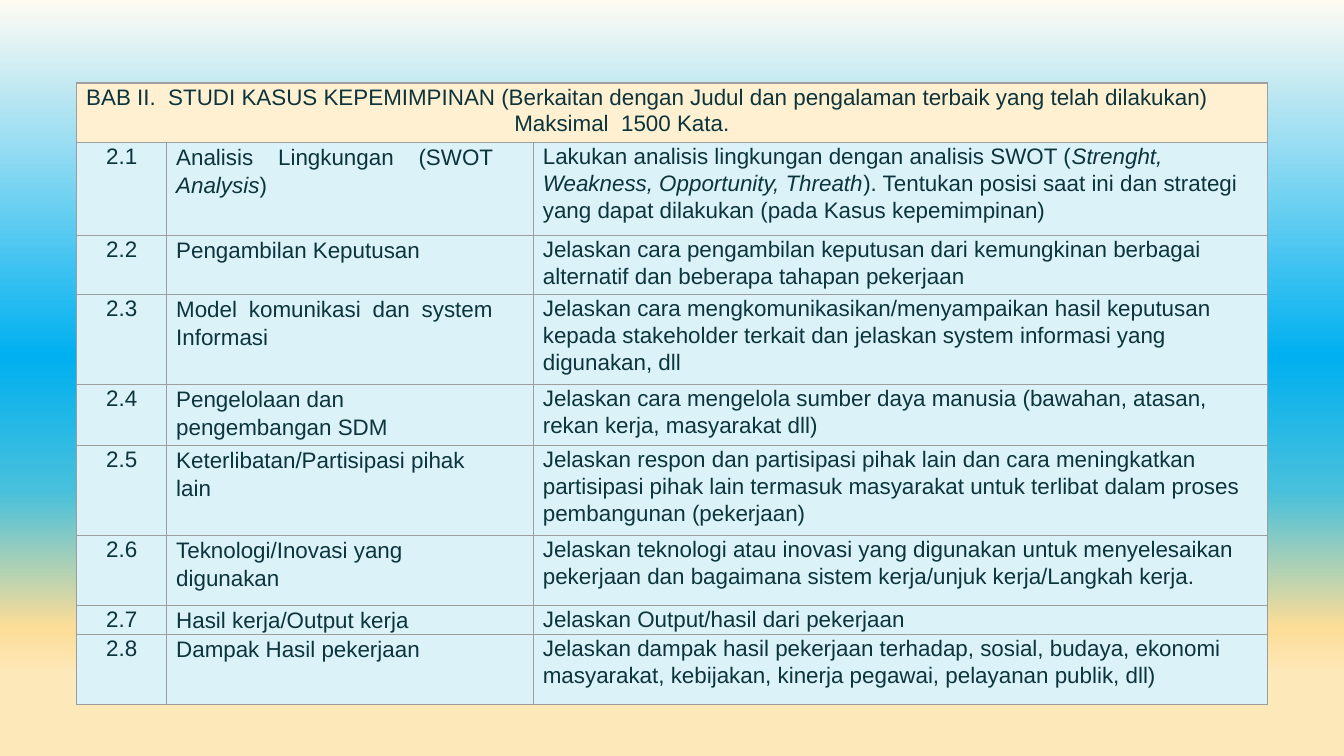
from dataclasses import dataclass

from lxml import etree
from pptx import Presentation
from pptx.dml.color import RGBColor
from pptx.enum.text import PP_ALIGN
from pptx.oxml.ns import qn
from pptx.slide import Slide
from pptx.table import _Cell
from pptx.util import Cm, Pt

LEFT, CENTER, JUSTIFY = PP_ALIGN.LEFT, PP_ALIGN.CENTER, PP_ALIGN.JUSTIFY

INK = RGBColor(0x0C, 0x34, 0x3D)
BORDER = RGBColor(0x9E, 0x9E, 0x9E)
HEADER_FILL = RGBColor(0xFE, 0xF0, 0xD1)
BODY_FILL = RGBColor(0xDA, 0xF2, 0xF8)
SKY_TO_SAND = [
    (0, RGBColor(0xFF, 0xFB, 0xF3)),
    (47, RGBColor(0x00, 0xB0, 0xF0)),
    (65, RGBColor(0x48, 0xC0, 0xDB)),
    (83, RGBColor(0xFC, 0xDD, 0x97)),
    (89, RGBColor(0xFD, 0xE8, 0xB9)),
]

FONT = "Arial"
FONT_SIZE = Pt(12)
BORDER_WIDTH = Pt(0.75)
COLUMN_WIDTHS = [1.7, 6.93, 13.87]
HEADER_HEIGHT = 1.13
HEADER_INDENT = Cm(8.09)
SIDE_MARGIN = Cm(0.18)
TOPIC_RIGHT_MARGIN = Cm(0.76)

HEADER = (
    "BAB II.  STUDI KASUS KEPEMIMPINAN (Berkaitan dengan Judul dan "
    "pengalaman terbaik yang telah dilakukan)\vMaksimal  1500 Kata."
)


@dataclass(frozen=True)
class Section:
    """One table row; asterisks enclose italic words."""
    topic: str
    guide: str
    height: float
    topic_align: PP_ALIGN = JUSTIFY


@dataclass(frozen=True)
class ParagraphStyle:
    align: PP_ALIGN = LEFT
    line_spacing: float = 1.07
    space_after: float = 1.4


SECTIONS = [
    Section("Analisis Lingkungan (SWOT *Analysis*)",
            "Lakukan analisis lingkungan dengan analisis SWOT (*Strenght, "
            "Weakness, Opportunity, Threath*). Tentukan posisi saat ini dan "
            "strategi yang dapat dilakukan (pada Kasus kepemimpinan)", 1.75),
    Section("Pengambilan Keputusan",
            "Jelaskan cara pengambilan keputusan dari kemungkinan berbagai "
            "alternatif dan beberapa tahapan pekerjaan", 1.12),
    Section("Model komunikasi dan system Informasi",
            "Jelaskan cara mengkomunikasikan/menyampaikan hasil keputusan "
            "kepada stakeholder terkait dan jelaskan system informasi yang "
            "digunakan, dll", 1.7),
    Section("Pengelolaan dan pengembangan SDM",
            "Jelaskan cara mengelola sumber daya manusia (bawahan, atasan, "
            "rekan kerja, masyarakat dll)", 1.15, LEFT),
    Section("Keterlibatan/Partisipasi pihak lain",
            "Jelaskan respon dan partisipasi pihak lain dan cara meningkatkan "
            "partisipasi pihak lain termasuk masyarakat untuk terlibat dalam "
            "proses pembangunan (pekerjaan)", 1.7, LEFT),
    Section("Teknologi/Inovasi yang digunakan",
            "Jelaskan teknologi atau inovasi yang digunakan untuk "
            "menyelesaikan pekerjaan dan bagaimana sistem kerja/unjuk "
            "kerja/Langkah kerja.", 1.32, LEFT),
    Section("Hasil kerja/Output kerja",
            "Jelaskan Output/hasil dari pekerjaan", 0.56),
    Section("Dampak Hasil pekerjaan",
            "Jelaskan dampak hasil pekerjaan terhadap, sosial, budaya, ekonomi "
            "masyarakat, kebijakan, kinerja pegawai, pelayanan publik, dll)", 1.32),
]


def add_color(parent: etree._Element, color: RGBColor) -> None:
    etree.SubElement(parent, qn("a:srgbClr"), val=str(color))


def paint_background(slide: Slide) -> None:
    fill = slide.background.fill
    fill.gradient()
    fill.gradient_angle = 270
    stops = slide.element.find(".//" + qn("a:gsLst"))
    for stop in list(stops):
        stops.remove(stop)
    for percent, color in SKY_TO_SAND:
        add_color(etree.SubElement(stops, qn("a:gs"), pos=str(percent * 1000)), color)


def style_cell(cell: _Cell, color: RGBColor) -> None:
    """Set margins, borders and fill."""
    cell.margin_left = cell.margin_right = SIDE_MARGIN
    cell.margin_top = cell.margin_bottom = 0
    tc_pr = cell._tc.get_or_add_tcPr()
    for side in ("a:lnL", "a:lnR", "a:lnT", "a:lnB"):
        line = etree.SubElement(tc_pr, qn(side), w=str(BORDER_WIDTH))
        add_color(etree.SubElement(line, qn("a:solidFill")), BORDER)
    cell.fill.solid()
    cell.fill.fore_color.rgb = color


def write_cell(cell: _Cell, text: str, style: ParagraphStyle) -> None:
    p = cell.text_frame.paragraphs[0]
    p.alignment = style.align
    p.line_spacing = style.line_spacing
    p.space_after = Pt(style.space_after)
    pieces = text.split("*")
    p.text = pieces[0]
    for piece in pieces[1:]:
        p.add_run().text = piece
    for i, r in enumerate(p.runs):
        r.font.name = FONT
        r.font.size = FONT_SIZE
        r.font.color.rgb = INK
        r.font.italic = len(pieces) > 1 and i % 2 == 1


def add_chapter_table(slide: Slide) -> None:
    heights = [HEADER_HEIGHT] + [section.height for section in SECTIONS]
    table = slide.shapes.add_table(
        len(heights), len(COLUMN_WIDTHS), Cm(1.45), Cm(1.57),
        Cm(sum(COLUMN_WIDTHS)), Cm(sum(heights))).table
    table.first_row = table.horz_banding = False
    for column, width in zip(table.columns, COLUMN_WIDTHS):
        column.width = Cm(width)
    for i, (row, height) in enumerate(zip(table.rows, heights)):
        row.height = Cm(height)
        for cell in row.cells:
            style_cell(cell, BODY_FILL if i else HEADER_FILL)

    header = table.cell(0, 0)
    header.merge(table.cell(0, len(COLUMN_WIDTHS) - 1))
    write_cell(header, HEADER, ParagraphStyle())
    p_pr = header.text_frame.paragraphs[0]._p.get_or_add_pPr()
    p_pr.set("marL", str(HEADER_INDENT))
    p_pr.set("indent", str(-HEADER_INDENT))

    for i, section in enumerate(SECTIONS, start=1):
        number, topic, guide = table.rows[i].cells
        write_cell(number, f"2.{i}", ParagraphStyle(CENTER))
        topic.margin_right = TOPIC_RIGHT_MARGIN
        write_cell(topic, section.topic, ParagraphStyle(section.topic_align, 1.11, 2))
        write_cell(guide, section.guide, ParagraphStyle())


def main() -> None:
    prs = Presentation()
    prs.slide_width, prs.slide_height = Cm(25.4), Cm(14.29)
    slide = prs.slides.add_slide(prs.slide_layouts[6])
    paint_background(slide)
    add_chapter_table(slide)
    prs.save("out.pptx")


if __name__ == "__main__":
    main()
